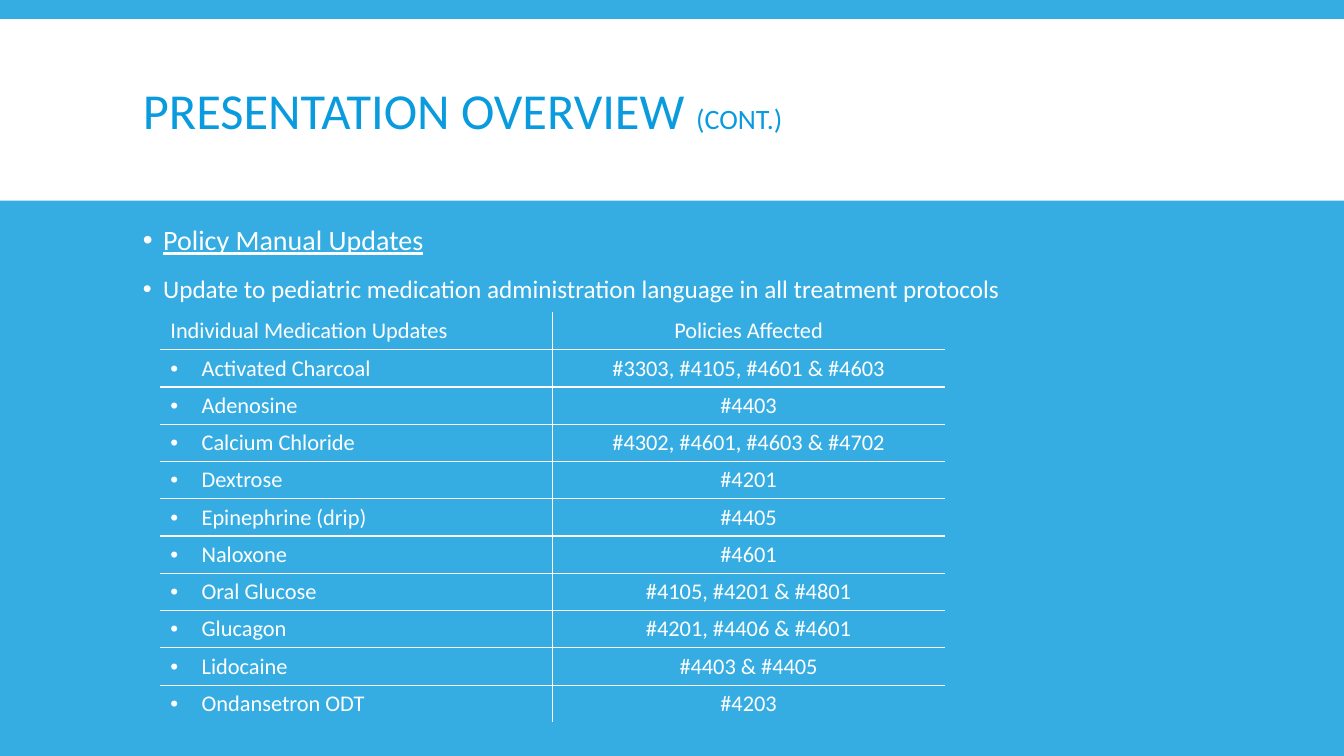
from lxml import etree
from pptx import Presentation
from pptx.dml.color import RGBColor
from pptx.enum import shapes, text
from pptx.oxml.ns import qn
from pptx.util import Inches, Pt

SKY = RGBColor(0x35, 0xAD, 0xE3)
BLUE = RGBColor(0x09, 0x9B, 0xDD)
WHITE = RGBColor(0xFF, 0xFF, 0xFF)
FONT = "Calibri"

TITLE = [("PRESENTATION OVERVIEW ", 36), ("(CONT.)", 20)]
POINTS = [
    ("Policy Manual Updates", 20, True),
    ("Update to pediatric medication administration language "
     "in all treatment protocols", 18, False),
]
HEADINGS = ("Individual Medication Updates", "Policies Affected")
MEDICATIONS = [
    ("Activated Charcoal", "#3303, #4105, #4601 & #4603"),
    ("Adenosine", "#4403"),
    ("Calcium Chloride", "#4302, #4601, #4603 & #4702"),
    ("Dextrose", "#4201"),
    ("Epinephrine (drip)", "#4405"),
    ("Naloxone", "#4601"),
    ("Oral Glucose", "#4105, #4201 & #4801"),
    ("Glucagon", "#4201, #4406 & #4601"),
    ("Lidocaine", "#4403 & #4405"),
    ("Ondansetron ODT", "#4203"),
]


def style_font(font, size, color):
    font.name = FONT
    font.size = Pt(size)
    font.color.rgb = color


def add_bullet(paragraph, indent):
    """Give the paragraph a white bullet with a hanging indent."""
    props = paragraph._p.get_or_add_pPr()
    props.set("marL", str(indent))
    props.set("indent", str(-indent))
    color = etree.SubElement(props, qn("a:buClr"))
    etree.SubElement(color, qn("a:srgbClr"), val=str(WHITE))
    etree.SubElement(props, qn("a:buFont"), typeface="Arial")
    etree.SubElement(props, qn("a:buChar"), char="•")


def add_text_frame(slide, left, top, width, height, anchor):
    box = slide.shapes.add_textbox(
        Inches(left), Inches(top), Inches(width), Inches(height))
    frame = box.text_frame
    frame.word_wrap = True
    frame.vertical_anchor = anchor
    return frame


def add_title_band(slide):
    band = slide.shapes.add_shape(
        shapes.MSO_SHAPE.RECTANGLE,
        Inches(0), Inches(0.19), Inches(13.33), Inches(1.8))
    band.shadow.inherit = False
    band.fill.solid()
    band.fill.fore_color.rgb = WHITE
    band.line.fill.background()


def add_title(slide):
    frame = add_text_frame(slide, 1.32, 0.31, 10.7, 1.65,
                           text.MSO_ANCHOR.MIDDLE)
    paragraph = frame.paragraphs[0]
    paragraph.line_spacing = 0.85
    for words, size in TITLE:
        run = paragraph.add_run()
        run.text = words
        style_font(run.font, size, BLUE)


def add_points(slide):
    frame = add_text_frame(slide, 1.32, 2.2, 10.7, 4.6, text.MSO_ANCHOR.TOP)
    frame.text = "\n".join(words for words, _, _ in POINTS)
    for paragraph, (_, size, underlined) in zip(frame.paragraphs, POINTS):
        paragraph.line_spacing = 0.9
        paragraph.space_before = Pt(12)
        paragraph.space_after = Pt(2)
        add_bullet(paragraph, Inches(0.2))
        run = paragraph.runs[0]
        style_font(run.font, size, WHITE)
        run.font.underline = underlined


def set_borders(cell, visible):
    """Draw a white line on the visible sides (L, R, T, B) and none elsewhere."""
    props = cell._tc.get_or_add_tcPr()
    for side in "LRTB":
        line = etree.SubElement(props, qn(f"a:ln{side}"), w=str(Pt(1)))
        if side in visible:
            fill = etree.SubElement(line, qn("a:solidFill"))
            etree.SubElement(fill, qn("a:srgbClr"), val=str(WHITE))
        else:
            etree.SubElement(line, qn("a:noFill"))


def add_medication_table(slide):
    rows = [HEADINGS, *MEDICATIONS]
    last = len(rows) - 1
    table = slide.shapes.add_table(
        len(rows), 2, Inches(1.59), Inches(3.1),
        Inches(7.78), Inches(0.37 * len(rows))).table
    table.first_row = False
    table.horz_banding = False
    for r, row in enumerate(rows):
        for c, words in enumerate(row):
            cell = table.cell(r, c)
            cell.text = words
            paragraph = cell.text_frame.paragraphs[0]
            style_font(paragraph.runs[0].font, 16, WHITE)
            if c == 1:
                paragraph.alignment = text.PP_ALIGN.CENTER
            elif r > 0:
                add_bullet(paragraph, Inches(0.31))
            inner_sides = "RL"[c] + "T" * (r > 0) + "B" * (r < last)
            set_borders(cell, inner_sides)
            cell.fill.background()


def main():
    deck = Presentation()
    deck.slide_width = Inches(13.33)
    deck.slide_height = Inches(7.5)
    slide = deck.slides.add_slide(deck.slide_layouts[6])
    slide.background.fill.solid()
    slide.background.fill.fore_color.rgb = SKY
    add_title_band(slide)
    add_title(slide)
    add_points(slide)
    add_medication_table(slide)
    deck.save("out.pptx")


if __name__ == "__main__":
    main()
